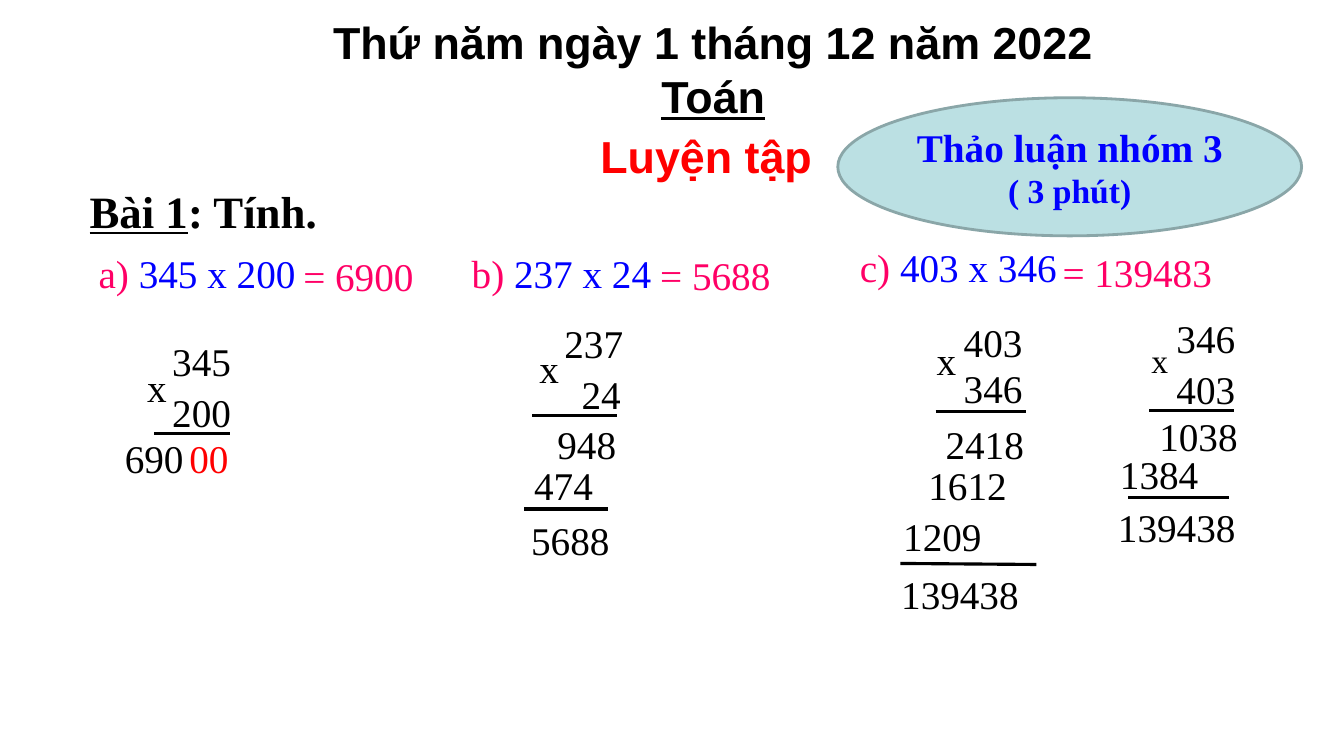
from lxml import etree
from pptx import Presentation
from pptx.dml.color import RGBColor
from pptx.enum import shapes, text
from pptx.oxml.ns import qn
from pptx.util import Inches, Pt

COLORS = {"black": "000000", "red": "FF0000", "pink": "FF0066", "blue": "0000FF",
          "oval": "BBE0E3", "edge": "8AA6A8"}
SERIF, SANS = "Times New Roman", "Arial"

# Title lines: runs of (text, color, size, underline)
TITLE = [
    [("Thứ năm ngày 1 tháng 12 năm 2022", "black", 32, False)],
    [("Toán", "black", 32, True)],
    [("Luyện tập", "red", 32, False), (" ", "red", 36, False)],
]
BUBBLE = [("Thảo luận nhóm 3 ", 28), ("( 3 phút)", 24)]

# Exercises: label, question, left, top; answer, left, top
EXERCISES = [
    ("a) ", "345 x 200", 0.88, 2.42, "= 6900", 2.91, 2.45),
    ("b) ", "237 x 24", 4.58, 2.42, "= 5688", 6.45, 2.44),
    ("c) ", "403 x 346", 8.43, 2.36, "= 139483", 10.44, 2.41),
]

# Column sums: factors and sign as (text, left, top, size), rule as (x1, x2, y),
# results as (text, left, top, color), closing rule as (x1, y1, x2, y2)
SUMS = [
    {"factors": [("345", 1.61, 3.3, 28), ("200", 1.61, 3.8, 28), ("x", 1.36, 3.55, 28)],
     "rule": (1.53, 2.28, 4.3),
     "results": [("690", 1.14, 4.26, "black"), ("00", 1.78, 4.26, "red")],
     "closing": None},
    {"factors": [("237", 5.5, 3.12, 28), ("24", 5.67, 3.62, 28), ("x", 5.25, 3.37, 28)],
     "rule": (5.28, 6.12, 4.12),
     "results": [("948", 5.43, 4.12, "black"), ("474", 5.2, 4.53, "black"),
                 ("5688", 5.17, 5.07, "black")],
     "closing": (5.2, 5.05, 6.03, 5.05)},
    {"factors": [("403", 9.46, 3.11, 28), ("346", 9.46, 3.56, 28), ("x", 9.19, 3.29, 28)],
     "rule": (9.28, 10.18, 4.08),
     "results": [("2418", 9.28, 4.12, "black"), ("1612", 9.11, 4.53, "black"),
                 ("1209", 8.86, 5.03, "black"), ("139438", 8.84, 5.61, "black")],
     "closing": (8.93, 5.59, 10.28, 5.6)},
    {"factors": [("346", 11.57, 3.07, 28), ("403", 11.57, 3.57, 28), ("x", 11.32, 3.32, 24)],
     "rule": (11.4, 12.24, 4.07),
     "results": [("1038", 11.4, 4.04, "black"), ("1384", 11.01, 4.42, "black"),
                 ("139438", 10.99, 4.94, "black")],
     "closing": (11.19, 4.94, 12.19, 4.94)},
]
WIDTHS = {1: 0.42, 2: 0.83, 3: 1, 4: 1, 6: 1.5}  # box width by number of digits


def rgb(name):
    return RGBColor.from_string(COLORS[name])


def style(font, size, color="black", name=SERIF, bold=False):
    font.size, font.name, font.bold = Pt(size), name, bold
    font.color.rgb = rgb(color)


def add_text(parent, runs, left, top, width, size=28, bold=False):
    """Add one line of (text, color) runs and return its runs."""
    height = 0.1 + size * 1.2 / 72
    sp = parent.add_textbox(Inches(left), Inches(top), Inches(width), Inches(height))
    tf = sp.text_frame
    tf.word_wrap = True
    tf.auto_size = text.MSO_AUTO_SIZE.SHAPE_TO_FIT_TEXT
    p = tf.paragraphs[0]
    for words, color in runs:
        r = p.add_run()
        r.text = words
        style(r.font, size, color, bold=bold)
    return p.runs


def add_rule(parent, x1, y1, x2, y2):
    line = parent.add_connector(shapes.MSO_CONNECTOR.STRAIGHT,
                                Inches(x1), Inches(y1), Inches(x2), Inches(y2))
    line.line.color.rgb = rgb("black")
    line.line.width = Pt(2.25)
    etree.SubElement(line._element.spPr, qn("a:effectLst"))


prs = Presentation()
prs.slide_width, prs.slide_height = Inches(13.33), Inches(7.5)
slide = prs.slides.add_slide(prs.slide_layouts[5])

# Title
title = slide.shapes.title
title.left, title.top = Inches(2.91), Inches(0.1)
title.width, title.height = Inches(8.33), Inches(1.78)
tf = title.text_frame
tf.auto_size = text.MSO_AUTO_SIZE.NONE
tf.vertical_anchor = text.MSO_ANCHOR.TOP
for i, runs in enumerate(TITLE):
    p = tf.add_paragraph() if i else tf.paragraphs[0]
    p.alignment = text.PP_ALIGN.CENTER
    for words, color, size, underline in runs:
        r = p.add_run()
        r.text = words
        style(r.font, size, color, SANS, True)
        r.font.underline = underline

# Exercise heading and questions
heading = add_text(slide.shapes, [("Bài 1", "black"), (": Tính.", "black")],
                   0.79, 1.77, 3.18, 32, True)
heading[0].font.underline = True
for label, question, x, y, answer, answer_x, answer_y in EXERCISES:
    add_text(slide.shapes, [(label, "pink"), (question, "blue")], x, y, 2.25)
    add_text(slide.shapes, [(answer, "pink")], answer_x, answer_y, 1.84)

# Column multiplications
for column in SUMS:
    group = slide.shapes.add_group_shape().shapes
    for words, x, y, size in column["factors"]:
        add_text(group, [(words, "black")], x, y, WIDTHS[len(words)], size)
    x1, x2, y = column["rule"]
    add_rule(group, x1, y, x2, y)
    for words, x, y, color in column["results"]:
        add_text(slide.shapes, [(words, color)], x, y, WIDTHS[len(words)])
    if column["closing"]:
        add_rule(slide.shapes, *column["closing"])

# Group work bubble
sp = slide.shapes.add_shape(shapes.MSO_SHAPE.OVAL, Inches(8.31), Inches(0.97),
                            Inches(4.6), Inches(1.37))
sp.shadow.inherit = False
sp.fill.solid()
sp.fill.fore_color.rgb = rgb("oval")
sp.line.color.rgb = rgb("edge")
sp.line.width = Pt(2)
tf = sp.text_frame
tf.vertical_anchor = text.MSO_ANCHOR.MIDDLE
for i, (words, size) in enumerate(BUBBLE):
    p = tf.add_paragraph() if i else tf.paragraphs[0]
    p.text = words
    p.alignment = text.PP_ALIGN.CENTER
    style(p.font, size, "blue", bold=True)

prs.save("out.pptx")
